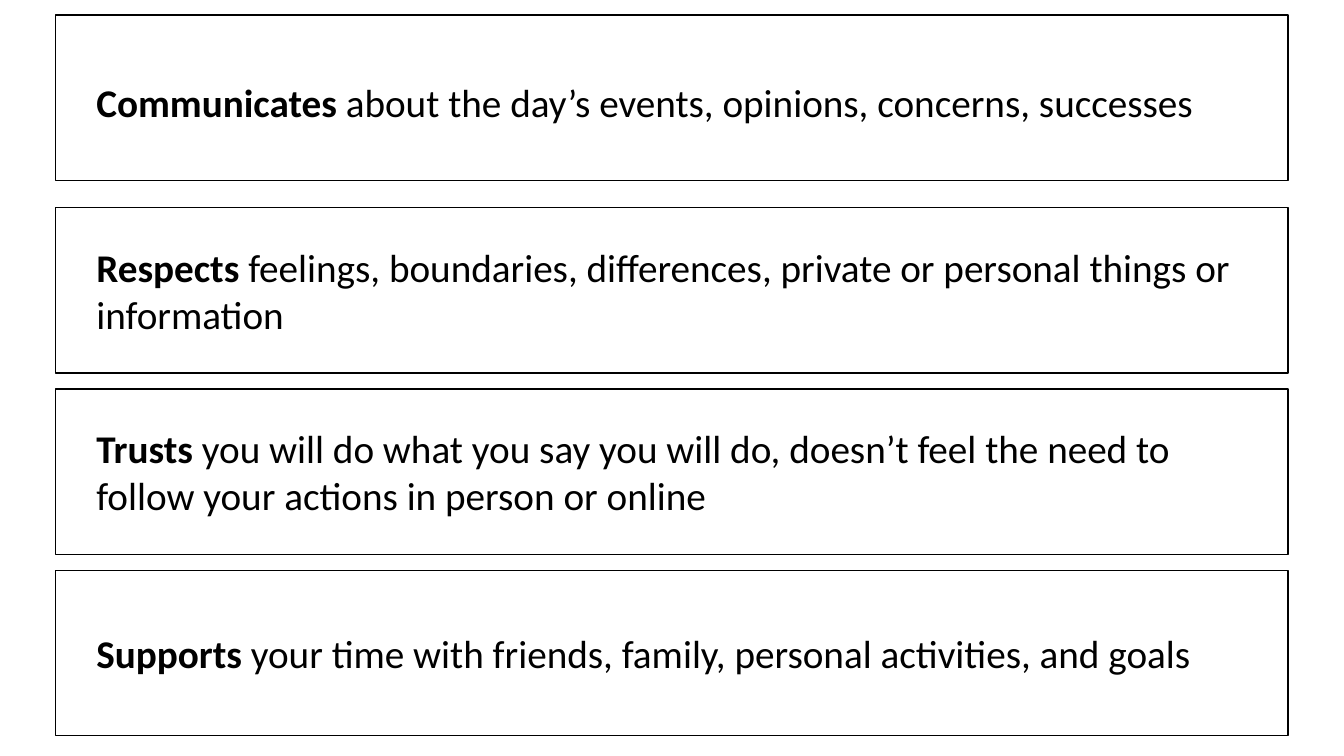
from pptx import Presentation
from pptx.dml.color import RGBColor
from pptx.enum.shapes import MSO_SHAPE
from pptx.enum.text import MSO_AUTO_SIZE
from pptx.util import Cm, Pt

RECTANGLE = MSO_SHAPE.RECTANGLE
FIT_SHAPE = MSO_AUTO_SIZE.SHAPE_TO_FIT_TEXT

COLORS = {"panel": "FFFFFF", "ink": "000000"}
TEXT_FORMAT = {"name": "Calibri", "size": Pt(28)}

# Panel geometry in cm
PANEL_LEFT, PANEL_WIDTH, PANEL_HEIGHT = 1.4, 31.06, 4.17
FIRST_TOP, SECOND_TOP, PITCH = 0.38, 5.23, 4.57
TEXT_LEFT, TEXT_WIDTH, WIDE_TEXT = 2.18, 28.32, 29.97
ONE_LINE, TWO_LINES = 1.45, 2.64

# Bold lead, remaining words, text width, text height, downward shift
QUALITIES = [
    ("Communicates", " about the day’s events, opinions, concerns, successes",
     TEXT_WIDTH, ONE_LINE, 0.11),
    ("Respects ", "feelings, boundaries, differences, private or personal "
     "things or information", WIDE_TEXT, TWO_LINES, 0),
    ("Trusts ", "you will do what you say you will do, doesn’t feel the need "
     "to follow your actions in person or online", TEXT_WIDTH, TWO_LINES, 0),
    ("Supports", " your time with friends, family, personal activities, and goals",
     TEXT_WIDTH, ONE_LINE, 0),
]


class SlideBuilder:
    def __init__(self, slide):
        self.slide = slide
        self.colors = {k: RGBColor.from_string(v) for k, v in COLORS.items()}

    def panel(self, left, top, width, height):
        sp = self.slide.shapes.add_shape(
            RECTANGLE, Cm(left), Cm(top), Cm(width), Cm(height))
        sp.shadow.inherit = False
        sp.fill.solid()
        sp.fill.fore_color.rgb = self.colors["panel"]
        sp.line.color.rgb = self.colors["ink"]
        sp.line.width = Pt(1)

    def statement(self, left, top, width, height, lead, rest):
        box = self.slide.shapes.add_textbox(
            Cm(left), Cm(top), Cm(width), Cm(height))
        tf = box.text_frame
        tf.word_wrap = True
        tf.auto_size = FIT_SHAPE
        p = tf.paragraphs[0]
        for text, bold in ((lead, True), (rest, False)):
            r = p.add_run()
            r.text = text
            for attr, value in {**TEXT_FORMAT, "bold": bold}.items():
                setattr(r.font, attr, value)
            r.font.color.rgb = self.colors["ink"]


def main():
    prs = Presentation()
    prs.slide_width, prs.slide_height = Cm(33.87), Cm(19.05)
    builder = SlideBuilder(prs.slides.add_slide(prs.slide_layouts[6]))

    # The first panel stands apart; the others are evenly spaced
    tops = [FIRST_TOP] + [SECOND_TOP + i * PITCH
                          for i in range(len(QUALITIES) - 1)]
    for top in tops:
        builder.panel(PANEL_LEFT, top, PANEL_WIDTH, PANEL_HEIGHT)

    # Statements, centred vertically on their panels
    for top, (lead, rest, width, height, shift) in zip(tops, QUALITIES):
        text_top = top + (PANEL_HEIGHT - height) / 2 + shift
        builder.statement(TEXT_LEFT, text_top, width, height, lead, rest)

    prs.save("out.pptx")


if __name__ == "__main__":
    main()
